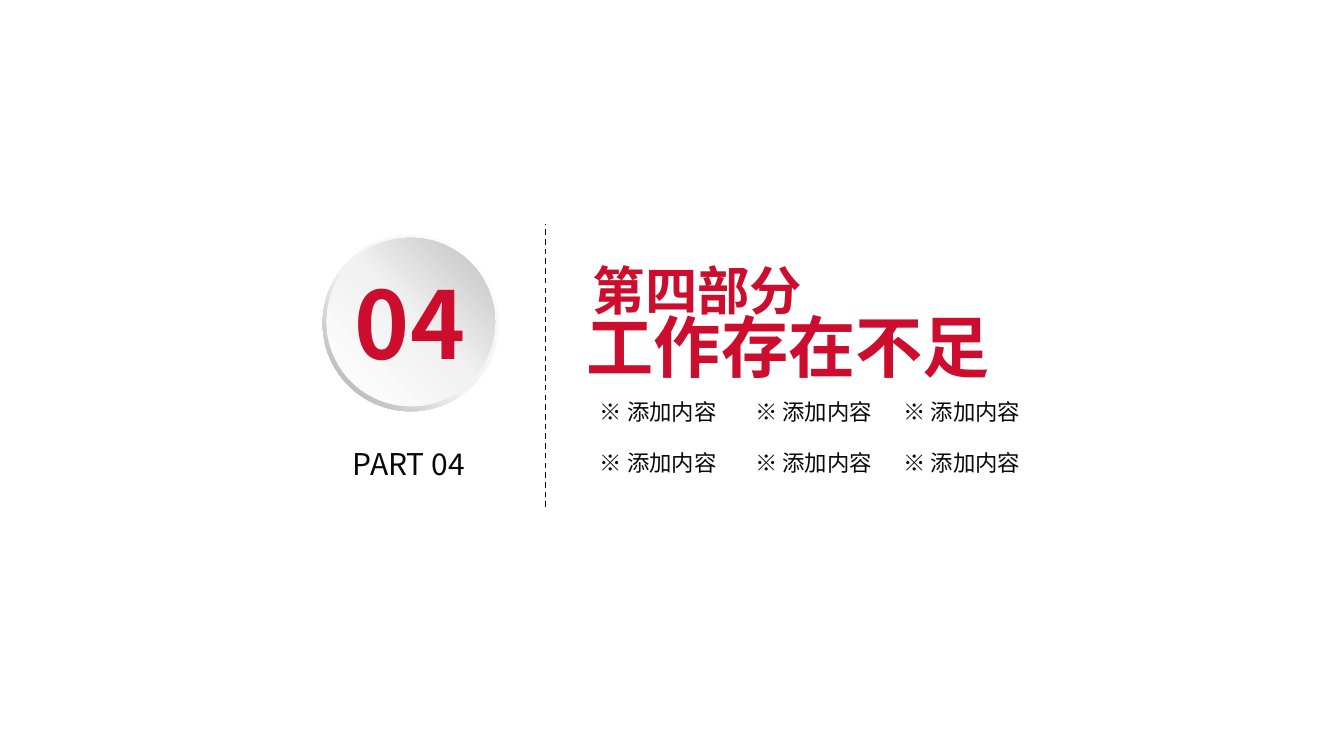
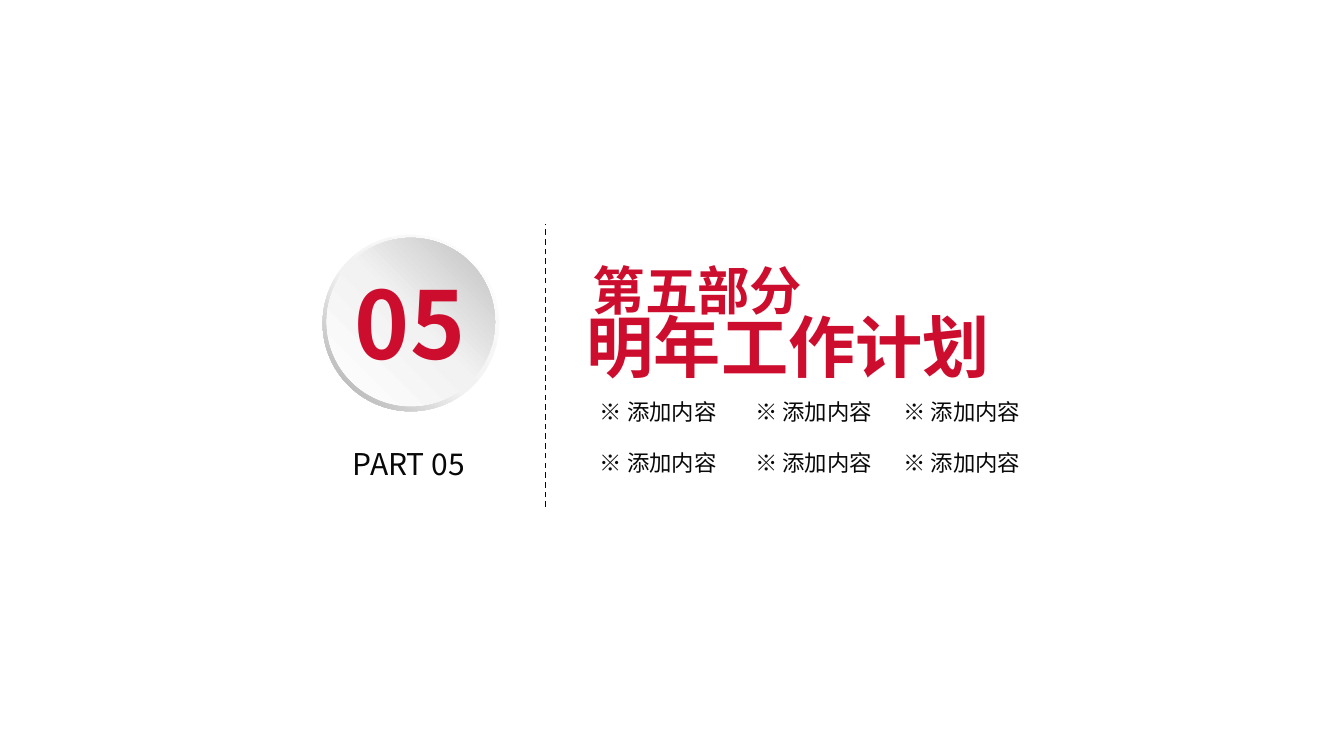
from itertools import product

from pptx import Presentation
from pptx.dml.color import RGBColor
from pptx.enum.dml import MSO_LINE
from pptx.enum.shapes import MSO_CONNECTOR, MSO_SHAPE
from pptx.enum.text import MSO_ANCHOR
from pptx.oxml import parse_xml
from pptx.oxml.ns import nsdecls, qn
from pptx.util import Inches, Pt
from lxml import etree

# Content: number, part name, title
SECTIONS = [
    ("04", "第四部分", "工作存在不足"),
    ("05", "第五部分", "明年工作计划"),
]
ITEM = "※ 添加内容"

# Shared style
FONT = "Noto Sans CJK SC"
RED = RGBColor(0xCC, 0x0D, 0x2E)
BLACK = RGBColor(0x08, 0x08, 0x08)
RING_STOPS = [(0, "FFFFFF"), (55, "F2F2F2"), (100, "A6A6A6")]
DISC_STOPS = [(0, "FFFFFF"), (51, "F2F2F2"), (100, "BFBFBF")]
ITEM_LEFTS = (5.86, 7.4, 8.87)
ITEM_TOPS = (3.9, 4.41)


def add_text(page, area, lines, color, bold=False, margins=(0, 0), spacing=1.0,
             anchor=MSO_ANCHOR.MIDDLE, wrap=True):
    """Add a text box; lines holds (text, size, indent in inches)."""
    box = page.shapes.add_textbox(*map(Inches, area))
    frame = box.text_frame
    frame.word_wrap = wrap
    frame.vertical_anchor = anchor
    frame.margin_left = frame.margin_right = Inches(margins[0])
    frame.margin_top = frame.margin_bottom = Inches(margins[1])
    for index, (text, size, indent) in enumerate(lines):
        para = frame.add_paragraph() if index else frame.paragraphs[0]
        para.text = text
        para.line_spacing = spacing
        if indent:
            para._p.get_or_add_pPr().set("marL", str(Inches(indent)))
        font = para.font
        font.name, font.size, font.bold = FONT, Pt(size), bold
        font.color.rgb = color
        for span in para.runs:
            east_asian = etree.SubElement(span._r.get_or_add_rPr(), qn("a:ea"))
            east_asian.set("typeface", FONT)


def add_round(page, preset, left, top, size, stops, angle):
    """Add a borderless round shape with a linear gradient."""
    shape = page.shapes.add_shape(preset, *map(Inches, (left, top, size, size)))
    shape.shadow.inherit = False
    shape.line.fill.background()
    marks = "".join(f'<a:gs pos="{position * 1000}"><a:srgbClr val="{color}"/></a:gs>'
                    for position, color in stops)
    gradient = parse_xml(f'<a:gradFill {nsdecls("a")} rotWithShape="1"><a:gsLst>{marks}</a:gsLst>'
                         f'<a:lin ang="{angle * 60000}" scaled="0"/></a:gradFill>')
    shape._element.spPr.find(qn("a:prstGeom")).addnext(gradient)
    return shape


def add_divider(page):
    line = page.shapes.add_connector(MSO_CONNECTOR.STRAIGHT, Inches(5.41), Inches(5.03),
                                     Inches(5.41), Inches(2.22))
    line.line.color.rgb = BLACK
    line.line.width = Pt(1)
    line.line.dash_style = MSO_LINE.DASH
    etree.SubElement(line._element.spPr, qn("a:effectLst"))


def add_section(deck, number, part, title):
    page = deck.slides.add_slide(deck.slide_layouts[6])
    # Heading and divider
    add_text(page, (5.72, 2.33, 4.24, 1.54), [(part, 37.4, 0.06), (title, 48, 0)], RED,
             bold=True, margins=(0.1, 0.05), spacing=0.8, anchor=MSO_ANCHOR.BOTTOM, wrap=False)
    add_divider(page)
    # Numbered badge
    add_text(page, (3.5, 4.42, 1.32, 0.36), [(f"PART {number}", 21.4, 0)], BLACK)
    ring = add_round(page, MSO_SHAPE.DONUT, 3.2, 2.33, 1.75, RING_STOPS, 135)
    ring.adjustments[0] = 0.05
    add_round(page, MSO_SHAPE.OVAL, 3.24, 2.36, 1.67, DISC_STOPS, 315)
    add_text(page, (3.52, 2.64, 1.32, 1.12), [(number, 66.7, 0)], RED, bold=True)
    # Grid of items
    for top, left in product(ITEM_TOPS, ITEM_LEFTS):
        add_text(page, (left, top, 1.5, 0.36), [(ITEM, 16, 0)], BLACK, margins=(0.09, 0.04))


def main():
    deck = Presentation()
    deck.slide_width, deck.slide_height = Inches(13.33), Inches(7.5)
    for section in SECTIONS:
        add_section(deck, *section)
    deck.save("out.pptx")


if __name__ == "__main__":
    main()
